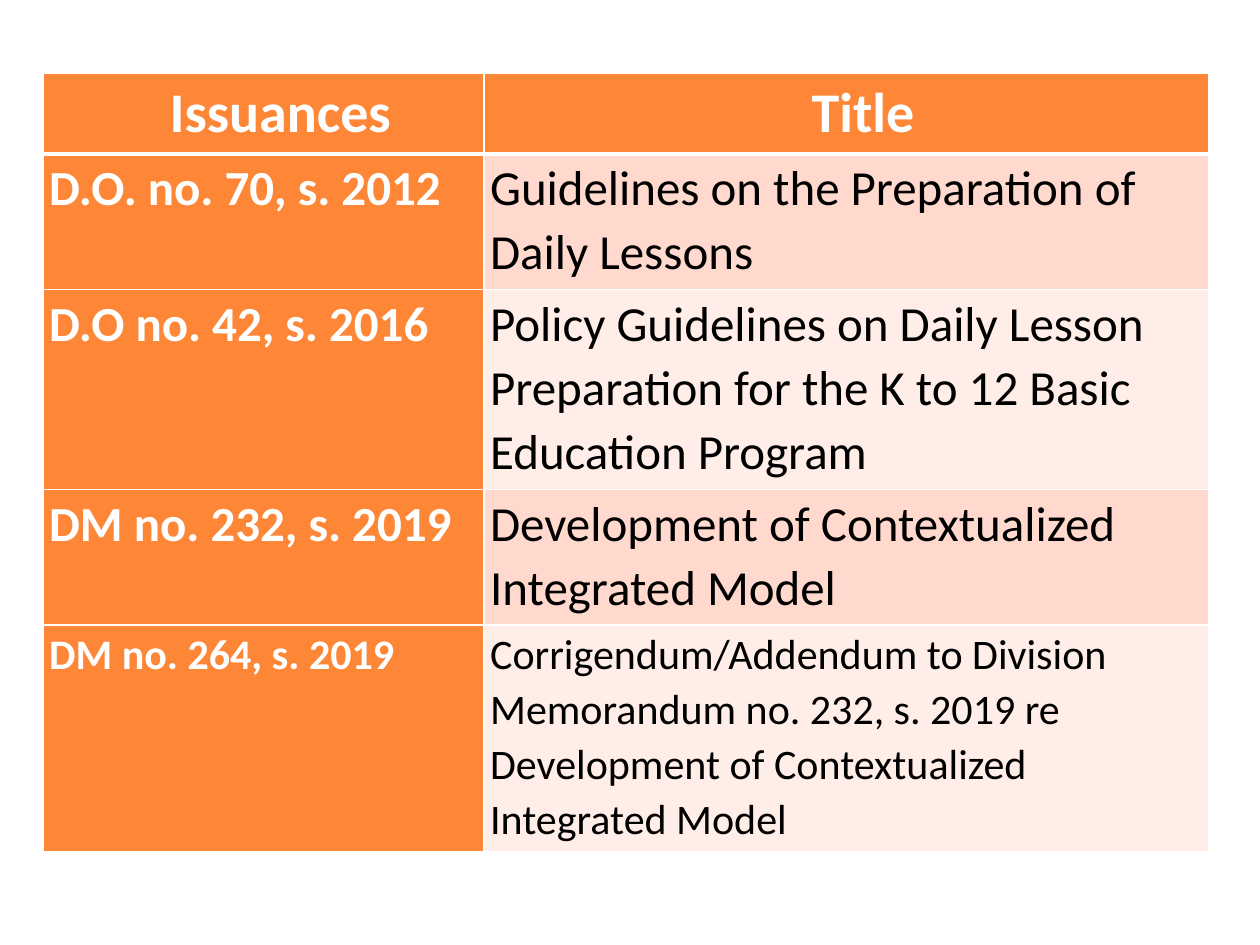
from pptx import Presentation
from pptx.dml.color import RGBColor
from pptx.enum.text import PP_ALIGN
from pptx.oxml.ns import qn
from pptx.util import Inches, Pt
from lxml import etree

CENTER, LEFT = PP_ALIGN.CENTER, PP_ALIGN.LEFT
ORANGE, WHITE, BLACK = "FE8637", "FFFFFF", "000000"
BANDS = ("FFD9CE", "FFEDE8")

COL_WIDTHS = (3.5, 5.75)
HEADER = ("Issuances", "Title")
HEADER_HEIGHT = 0.63
ISSUANCES = [  # number, title, text size, row height
    ("D.O. no. 70, s. 2012",
     "Guidelines on the Preparation of Daily Lessons", 28, 1.07),
    ("D.O no. 42, s. 2016",
     "Policy Guidelines on Daily Lesson Preparation for the K to 12 Basic "
     "Education Program", 28, 1.58),
    ("DM no. 232, s. 2019",
     "Development of Contextualized Integrated Model", 28, 1.07),
    ("DM no. 264, s. 2019",
     "Corrigendum/Addendum to Division Memorandum no. 232, s. 2019 re "
     "Development of Contextualized Integrated Model", 24, 1.79),
]


def rgb(value):
    return RGBColor.from_string(value)


class Deck:
    font = "Calibri"
    line_spacing = 1.07
    margins = {"margin_left": 0.05, "margin_top": 0.01,
               "margin_right": 0.03, "margin_bottom": 0.05}

    def __init__(self, width, height):
        self.prs = Presentation()
        self.prs.slide_width = Inches(width)
        self.prs.slide_height = Inches(height)
        self.s = self.prs.slides.add_slide(self.prs.slide_layouts[6])

    def table(self, left, top, widths, heights):
        frame = self.s.shapes.add_table(
            len(heights), len(widths), Inches(left), Inches(top),
            Inches(sum(widths)), Inches(sum(heights)))
        table = frame.table
        for column, width in zip(table.columns, widths):
            column.width = Inches(width)
        for row, height in zip(table.rows, heights):
            row.height = Inches(height)
        return table

    def borders(self, cell, **widths):
        """Draw white borders; widths in points are keyed L, R, T and B."""
        tcPr = cell._tc.get_or_add_tcPr()
        for side in "LRTB":
            ln = etree.SubElement(tcPr, qn("a:ln" + side),
                                  w=str(Pt(widths.get(side, 1))))
            fill = etree.SubElement(ln, qn("a:solidFill"))
            etree.SubElement(fill, qn("a:srgbClr"), val=WHITE)

    def cell(self, cell, text, size, fill, color=WHITE, bold=True,
             align=LEFT, indent=0):
        for name, value in self.margins.items():
            setattr(cell, name, Inches(value))
        cell.fill.solid()
        cell.fill.fore_color.rgb = rgb(fill)
        p = cell.text_frame.paragraphs[0]
        p.alignment, p.line_spacing = align, self.line_spacing
        if indent:
            p._p.get_or_add_pPr().set("indent", str(Inches(indent)))
        r = p.add_run()
        r.text = text
        for name, value in {"name": self.font, "size": Pt(size),
                            "bold": bold}.items():
            setattr(r.font, name, value)
        r.font.color.rgb = rgb(color)


def main():
    deck = Deck(10, 7.5)
    heights = [HEADER_HEIGHT] + [row[-1] for row in ISSUANCES]
    table = deck.table(0.34, 0.58, COL_WIDTHS, heights)

    for col, text in enumerate(HEADER):
        cell = table.cell(0, col)
        deck.borders(cell, B=3)
        deck.cell(cell, text, 32, ORANGE, align=CENTER, indent=0.25)

    for i, (number, title, size, _) in enumerate(ISSUANCES):
        number_cell, title_cell = table.rows[i + 1].cells
        for cell in (number_cell, title_cell):
            deck.borders(cell, T=3 if i == 0 else 1)
        deck.cell(number_cell, number, size, ORANGE)
        deck.cell(title_cell, title, size, BANDS[i % 2], BLACK, bold=False)

    deck.prs.save("out.pptx")


if __name__ == "__main__":
    main()
